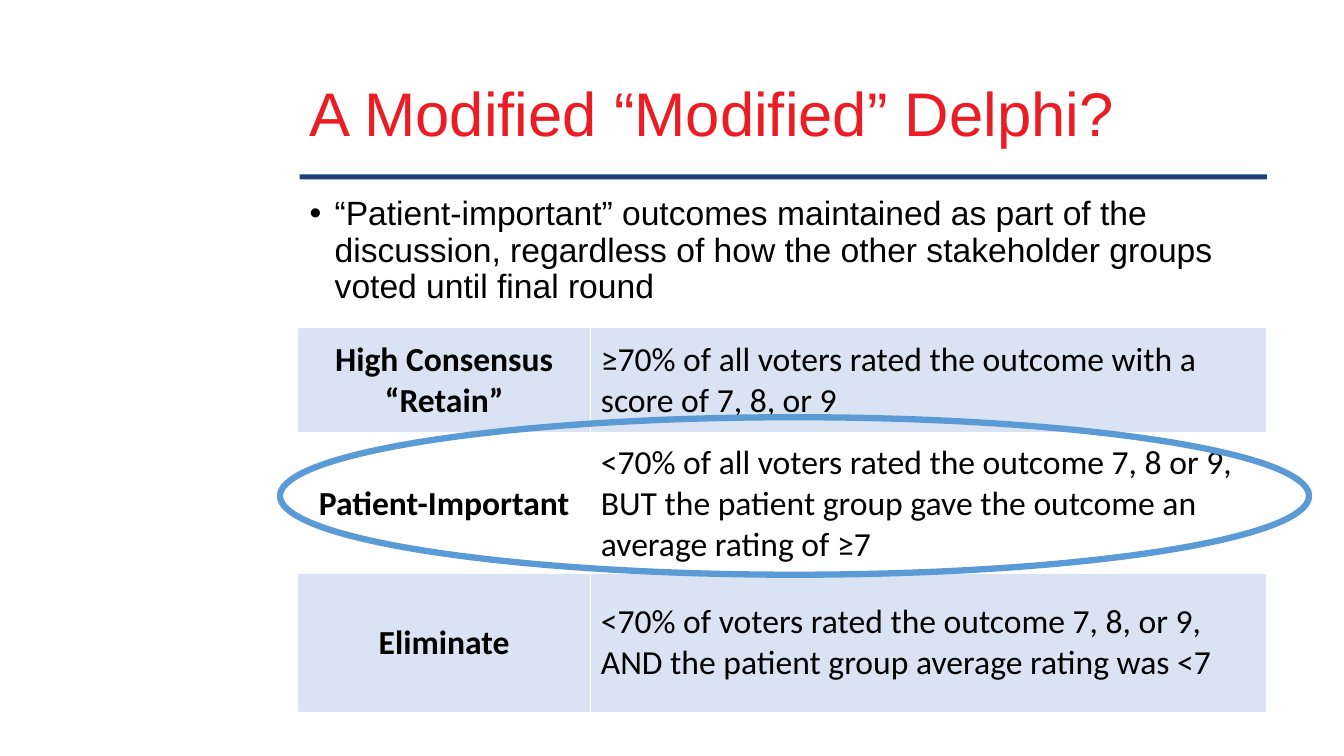
from pptx import Presentation
from pptx.util import Pt
from pptx.dml.color import RGBColor
from pptx.enum.shapes import MSO_SHAPE as Kind
from pptx.enum.text import MSO_ANCHOR as Anchor, PP_ALIGN as Align
from pptx.oxml import parse_xml
from pptx.oxml.ns import nsdecls
from lxml.etree import SubElement

NS = "{http://schemas.openxmlformats.org/drawingml/2006/main}"


def tint(form, code):
    form.solid()
    form.fore_color.rgb = RGBColor.from_string(code)


def write(par, text, face, size, code, bold=False):
    run = par.add_run()
    run.text = text
    run.font.name = face
    run.font.size = Pt(size)
    run.font.bold = bold
    tint(run.font.fill, code)


deck = Presentation()
deck.slide_width = Pt(960)
deck.slide_height = Pt(540)
slide = deck.slides.add_slide(deck.slide_layouts[6])
shapes = slide.shapes

rule = shapes.add_shape(Kind.RECTANGLE, Pt(214), Pt(124.5), Pt(691), Pt(3.6))
rule.shadow.inherit = False
tint(rule.fill, "1F3F78")
rule.line.fill.background()

title = shapes.add_textbox(Pt(214), Pt(42.5), Pt(691), Pt(82)).text_frame
title.word_wrap = True
title.vertical_anchor = Anchor.MIDDLE
head = title.paragraphs[0]
head.line_spacing = 0.9
write(head, "A Modified “Modified” Delphi?", "Arial", 44, "EB1C24")

body = shapes.add_textbox(Pt(214), Pt(137), Pt(691), Pt(347)).text_frame
body.word_wrap = True
point = body.paragraphs[0]
point.line_spacing = 0.9
props = point._p.get_or_add_pPr()
props.set("marL", str(Pt(18)))
props.set("indent", str(Pt(-18)))
SubElement(props, NS + "buFont", typeface="Arial")
SubElement(props, NS + "buChar", char="•")
write(point, "“Patient-important” outcomes maintained as part of the discussion, "
      "regardless of how the other stakeholder groups voted until final round",
      "Arial", 24, "000000")

rows = [
    (76, ["High Consensus", "“Retain”"],
     "≥70% of all voters rated the outcome with a score of 7, 8, or 9"),
    (99.5, ["Patient-Important"],
     "<70% of all voters rated the outcome 7, 8 or 9, BUT the patient group "
     "gave the outcome an average rating of ≥7"),
    (99.5, ["Eliminate"],
     "<70% of voters rated the outcome 7, 8, or 9, AND the patient group "
     "average rating was <7"),
]
table = shapes.add_table(3, 2, Pt(212.5), Pt(234), Pt(692), Pt(275)).table
table.first_row = False
table.horz_banding = False
table.columns[0].width = Pt(209.5)
table.columns[1].width = Pt(482.5)

for i, (high, names, rating) in enumerate(rows):
    table.rows[i].height = Pt(high)
    for j, lines in enumerate([names, [rating]]):
        cell = table.cell(i, j)
        cell.vertical_anchor = Anchor.MIDDLE
        for side in "LRTB":
            thick = 3 if (i, side) in [(0, "B"), (1, "T")] else 1
            cell._tc.get_or_add_tcPr().append(parse_xml(
                f'<a:ln{side} {nsdecls("a")} w="{Pt(thick)}"><a:solidFill>'
                f'<a:srgbClr val="FFFFFF"/></a:solidFill></a:ln{side}>'))
        if i == 1:
            cell.fill.background()
        else:
            tint(cell.fill, "DAE3F3")
        frame = cell.text_frame
        for k, line in enumerate(lines):
            par = frame.add_paragraph() if k else frame.paragraphs[0]
            par.alignment = Align.LEFT if j else Align.CENTER
            write(par, line, "Calibri", 24, "000000", j == 0)

ring = shapes.add_shape(Kind.OVAL, Pt(200), Pt(298), Pt(735), Pt(112.5))
ring.shadow.inherit = False
ring.fill.background()
tint(ring.line.fill, "5B9BD5")
ring.line.width = Pt(4.5)

deck.save("out.pptx")
